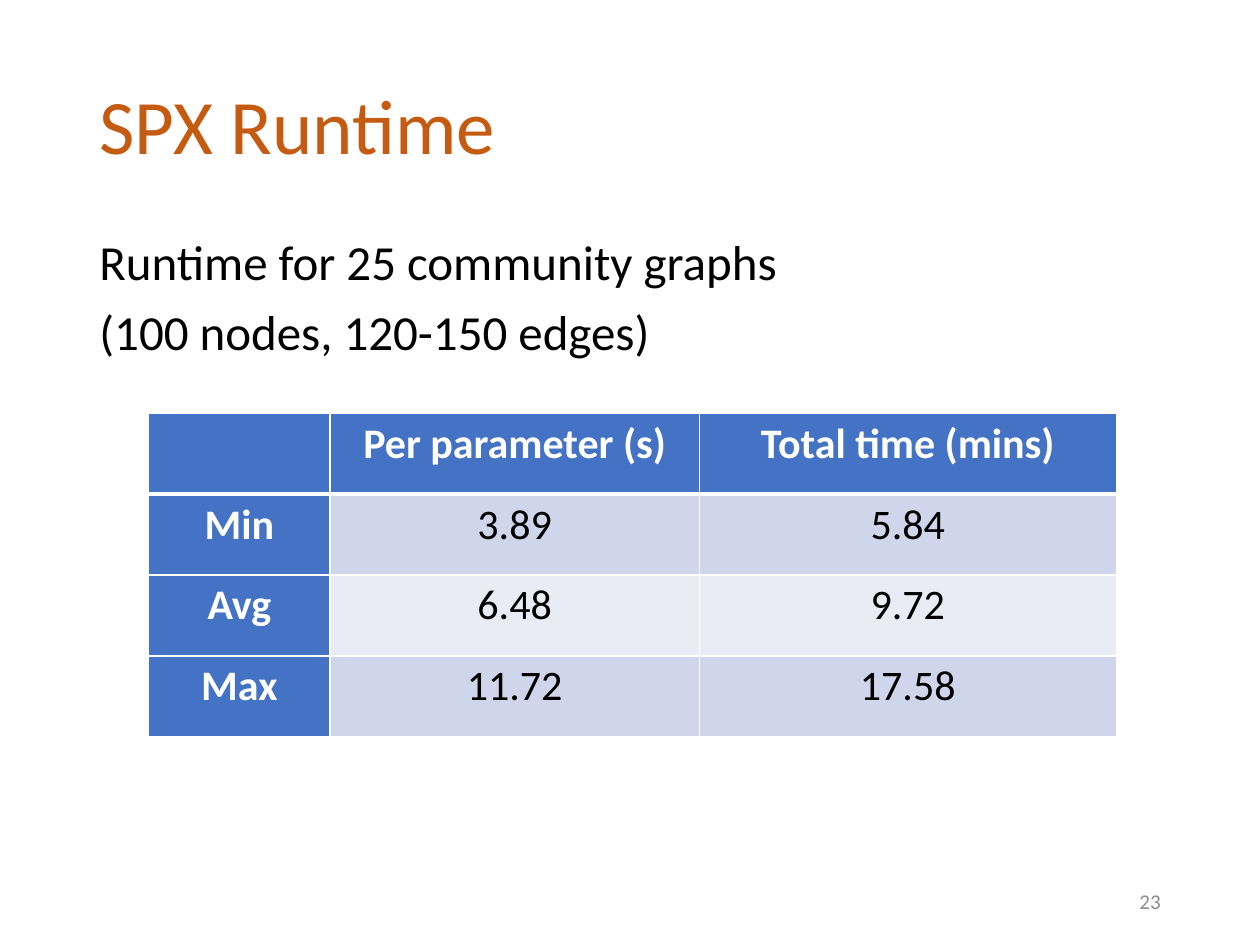
"""Builds the SPX Runtime slide with its table of run times."""
from lxml.etree import SubElement
from pptx import Presentation
from pptx.dml.color import RGBColor
from pptx.enum.text import MSO_ANCHOR, PP_ALIGN
from pptx.oxml.ns import qn
from pptx.util import Inches, Pt

COLORS = {
    "title": "C55A11",
    "body": "000000",
    "number": "8C8C8C",
    "header": "4472C4",
    "light": "FFFFFF",
    "odd": "CFD5EA",
    "even": "E9EBF5",
}

deck = Presentation()
deck.slide_width, deck.slide_height = Inches(10), Inches(7.5)
slide = deck.slides.add_slide(deck.slide_layouts[6])
width, height = deck.slide_width, deck.slide_height
margin = 0.069 * width
content_width = width - 2 * margin


def write(frame, text, size, color, bold=False, align=PP_ALIGN.LEFT,
          anchor=MSO_ANCHOR.TOP, spacing=1.0, before=0):
    frame.word_wrap = True
    frame.vertical_anchor = anchor
    for index, line in enumerate(text.split("\n")):
        paragraph = frame.add_paragraph() if index else frame.paragraphs[0]
        paragraph.alignment = align
        paragraph.line_spacing = spacing
        paragraph.space_before = Pt(before)
        run = paragraph.add_run()
        run.text = line
        run.font.name = "Calibri"
        run.font.size = Pt(size)
        run.font.bold = bold
        run.font.color.rgb = RGBColor.from_string(COLORS[color])


def draw_borders(cell, bottom):
    properties = cell._tc.get_or_add_tcPr()
    for side, points in (("L", 1), ("R", 1), ("T", 1), ("B", bottom)):
        line = SubElement(properties, qn(f"a:ln{side}"), w=str(Pt(points)))
        SubElement(SubElement(line, qn("a:solidFill")), qn("a:srgbClr"), val=COLORS["light"])


title = slide.shapes.add_textbox(int(margin), int(0.065 * height), int(content_width), int(0.145 * height))
write(title.text_frame, "SPX Runtime", size=44, color="title", anchor=MSO_ANCHOR.MIDDLE, spacing=0.9)

description = slide.shapes.add_textbox(int(margin), int(0.245 * height), int(content_width), int(0.16 * height))
write(description.text_frame, "Runtime for 25 community graphs\n(100 nodes, 120-150 edges)",
      size=28, color="body", spacing=0.9, before=10)

number_width = 0.225 * width
page_number = slide.shapes.add_textbox(
    int(width - margin - number_width), int(0.927 * height), int(number_width), int(0.053 * height))
write(page_number.text_frame, "23", size=12, color="number", align=PP_ALIGN.RIGHT, anchor=MSO_ANCHOR.MIDDLE)

runtimes = [
    ["", "Per parameter (s)", "Total time (mins)"],
    ["Min", "3.89", "5.84"],
    ["Avg", "6.48", "9.72"],
    ["Max", "11.72", "17.58"],
]
column_shares = [0.144, 0.293, 0.331]
runtime_table = slide.shapes.add_table(
    len(runtimes), len(column_shares), int(0.118 * width), Inches(3.28),
    int(sum(column_shares) * width), Inches(2.57)).table
runtime_table.first_col = True
for column, share in zip(runtime_table.columns, column_shares):
    column.width = int(share * width)

for row, values in enumerate(runtimes):
    for column, value in enumerate(values):
        cell = runtime_table.cell(row, column)
        heading = row == 0 or column == 0
        fill = "header" if heading else "odd" if row % 2 else "even"
        cell.margin_left = cell.margin_right = Inches(0.07)
        cell.margin_top = cell.margin_bottom = Inches(0.04)
        draw_borders(cell, bottom=1 if row else 3)
        cell.fill.solid()
        cell.fill.fore_color.rgb = RGBColor.from_string(COLORS[fill])
        if value:
            write(cell.text_frame, value, size=24, color="light" if heading else "body",
                  bold=heading, align=PP_ALIGN.CENTER)

deck.save("out.pptx")
